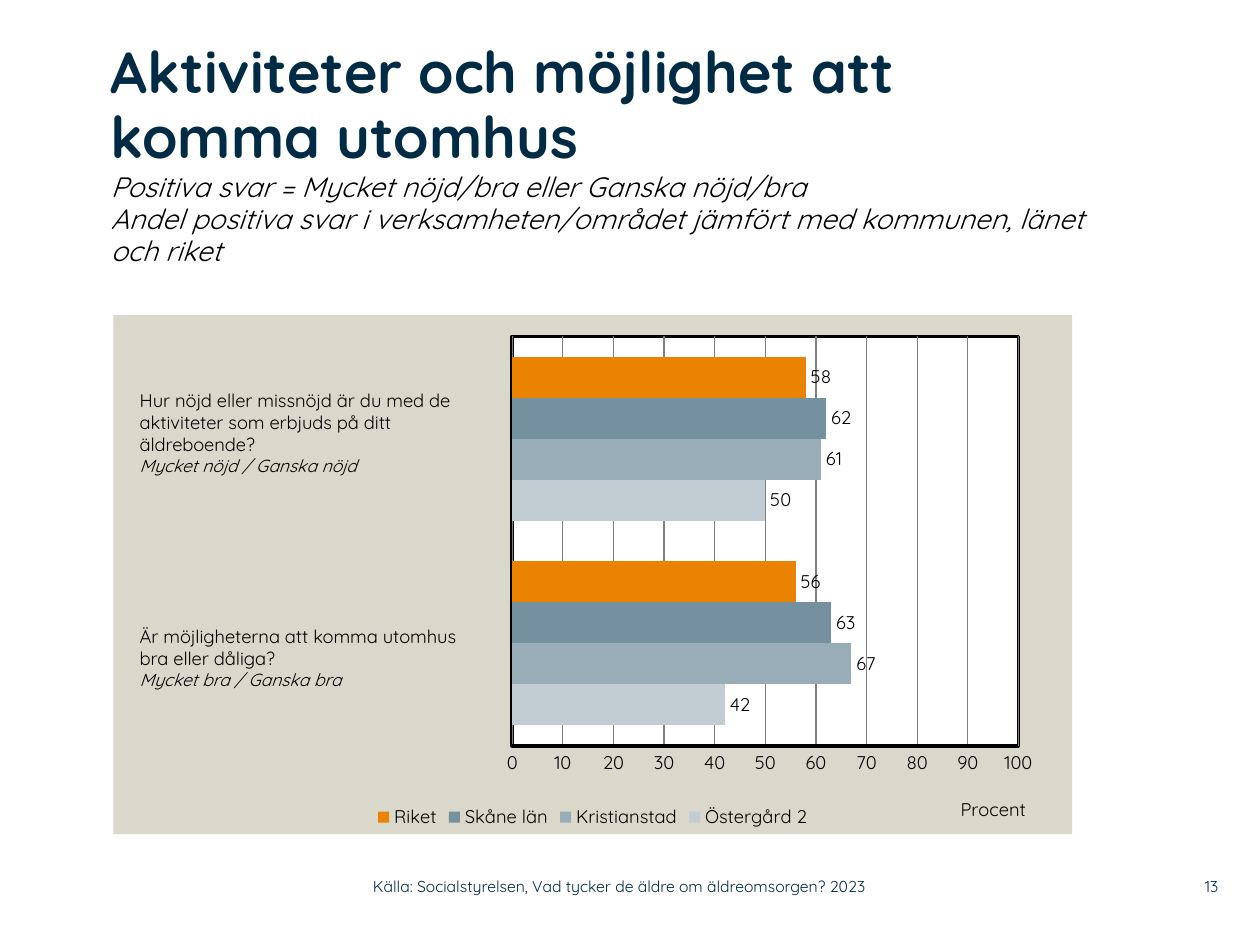
from lxml import etree
from pptx import Presentation
from pptx.chart.data import CategoryChartData
from pptx.dml.color import RGBColor
from pptx.enum.chart import XL_CHART_TYPE, XL_LABEL_POSITION, XL_LEGEND_POSITION, XL_TICK_MARK
from pptx.enum.text import MSO_ANCHOR, PP_ALIGN
from pptx.oxml.ns import qn
from pptx.util import Inches, Pt

BAR_CLUSTERED = XL_CHART_TYPE.BAR_CLUSTERED
OUTSIDE_END = XL_LABEL_POSITION.OUTSIDE_END
LEGEND_BOTTOM = XL_LEGEND_POSITION.BOTTOM
NO_TICK = XL_TICK_MARK.NONE
TOP, MIDDLE = MSO_ANCHOR.TOP, MSO_ANCHOR.MIDDLE
LEFT, RIGHT = PP_ALIGN.LEFT, PP_ALIGN.RIGHT

FONT = "Quicksand"
NAVY = RGBColor(0x00, 0x2B, 0x45)
BLACK = RGBColor(0x00, 0x00, 0x00)
WHITE = RGBColor(0xFF, 0xFF, 0xFF)
GREY = RGBColor(0x80, 0x80, 0x80)
SAND = RGBColor(0xDA, 0xD7, 0xCB)
ORANGE = RGBColor(0xE9, 0x83, 0x00)
SLATE = RGBColor(0x75, 0x90, 0x9F)
MIST = RGBColor(0x99, 0xAD, 0xB9)
PALE = RGBColor(0xC2, 0xCD, 0xD3)

SLIDE_WIDTH, SLIDE_HEIGHT = 10, 7.5
QUESTION_LEFT, QUESTION_WIDTH = 1.01, 3.01
FOOTER_TOP, FOOTER_HEIGHT = 6.89, 0.29

AREAS = [
    ("Östergård 2", (42, 50), PALE),
    ("Kristianstad", (67, 61), MIST),
    ("Skåne län", (63, 62), SLATE),
    ("Riket", (56, 58), ORANGE),
]
QUESTIONS = [
    (3.04, 0.98,
     ["Hur nöjd eller missnöjd är du med de aktiviteter som erbjuds på ditt äldreboende?"],
     "Mycket nöjd / Ganska nöjd"),
    (4.91, 0.81,
     ["Är möjligheterna att komma utomhus", "bra eller dåliga?"],
     "Mycket bra / Ganska bra"),
]


def style_font(font, size=10.5, color=BLACK, bold=False, italic=False):
    """Apply the deck's typeface with the given format."""
    font.name, font.size, font.bold, font.italic = FONT, Pt(size), bold, italic
    font.color.rgb = color


def add_text(slide, box, paragraphs, align=LEFT, anchor=TOP, inset=None, spacing=None):
    """Add a text box; each paragraph is a list of (text, font format) runs."""
    textbox = slide.shapes.add_textbox(*(Inches(length) for length in box))
    frame = textbox.text_frame
    frame.word_wrap = True
    frame.vertical_anchor = anchor
    if inset is not None:
        frame.margin_left = frame.margin_right = Inches(inset)
        frame.margin_top = frame.margin_bottom = Inches(inset)
    for index, runs in enumerate(paragraphs):
        paragraph = frame.paragraphs[0] if index == 0 else frame.add_paragraph()
        paragraph.alignment = align
        paragraph.line_spacing = spacing
        for position, (text, font_format) in enumerate(runs):
            if position:
                paragraph.add_line_break()
            run = paragraph.add_run()
            run.text = text
            style_font(run.font, **font_format)


def add_properties(parent, fill, line=None, line_width=0):
    """Give a chart part a solid fill and an optional outline."""
    properties = etree.Element(qn("c:spPr"))
    solid = etree.SubElement(properties, qn("a:solidFill"))
    etree.SubElement(solid, qn("a:srgbClr"), val=str(fill))
    outline = etree.SubElement(properties, qn("a:ln"))
    if line is None:
        etree.SubElement(outline, qn("a:noFill"))
    else:
        outline.set("w", str(Pt(line_width)))
        solid = etree.SubElement(outline, qn("a:solidFill"))
        etree.SubElement(solid, qn("a:srgbClr"), val=str(line))
    parent.append(properties)
    return properties


def build_layout(**values):
    """Return a manual chart layout with its settings in schema order."""
    layout = etree.Element(qn("c:layout"))
    manual = etree.SubElement(layout, qn("c:manualLayout"))
    for name, value in values.items():
        etree.SubElement(manual, qn(f"c:{name}"), val=str(value))
    return layout


def style_series(chart):
    """Colour the bars and show their values."""
    plot = chart.plots[0]
    plot.gap_width, plot.overlap = 100, 0
    plot.vary_by_categories = False
    for series, (_, _, color) in zip(plot.series, AREAS):
        series.format.fill.solid()
        series.format.fill.fore_color.rgb = color
        labels = series.data_labels
        labels.show_value = True
        labels.position = OUTSIDE_END
        style_font(labels.font)


def style_axes(chart):
    """Hide the question axis and set up the percentage axis."""
    chart.category_axis.visible = False
    percent = chart.value_axis
    percent.minimum_scale, percent.maximum_scale, percent.major_unit = 0, 100, 10
    percent.major_tick_mark = percent.minor_tick_mark = NO_TICK
    style_font(percent.tick_labels.font)
    percent.format.line.color.rgb = BLACK
    percent.format.line.width = Pt(2)
    percent.has_major_gridlines = True
    percent.major_gridlines.format.line.color.rgb = GREY
    percent.major_gridlines.format.line.width = Pt(0.75)
    title = percent.axis_title
    title.text_frame.text = "Procent"
    style_font(title.text_frame.paragraphs[0].runs[0].font)
    title_element = percent.axis_title._element
    for old in title_element.findall(qn("c:layout")):
        title_element.remove(old)
    title_element.find(qn("c:tx")).addnext(
        build_layout(xMode="edge", yMode="edge", x=0.88, y=0.92))


def add_answer_chart(slide):
    """Add the bar chart comparing the areas for each question."""
    answers = CategoryChartData(number_format="0")
    answers.categories = ["1", "2"]
    for name, shares, _ in AREAS:
        answers.add_series(name, shares)
    box = (Inches(length) for length in (0.9, 2.5, 7.61, 4.12))
    chart = slide.shapes.add_chart(BAR_CLUSTERED, *box, answers).chart
    chart.has_title = False
    style_font(chart.font)
    style_series(chart)
    style_axes(chart)
    chart.has_legend = True
    chart.legend.position = LEGEND_BOTTOM
    chart.legend.include_in_layout = False
    style_font(chart.legend.font)
    chart_space = chart._chartSpace
    chart_space.find(qn("c:chart")).addnext(add_properties(chart_space, SAND))
    plot_area = chart_space.find(".//" + qn("c:plotArea"))
    for old in plot_area.findall(qn("c:layout")):
        plot_area.remove(old)
    plot_area.insert(0, build_layout(
        layoutTarget="inner", xMode="edge", yMode="edge",
        x=0.416, y=0.041, w=0.528, h=0.789))
    add_properties(plot_area, WHITE, BLACK, 2)


def add_heading(slide):
    """Add the title with its explanatory lines."""
    note = dict(size=16, italic=True)
    add_text(slide, (0.88, 0.32, 7.8, 1.89), [[
        ("Aktiviteter och möjlighet att komma utomhus", dict(size=33, color=NAVY, bold=True)),
        ("Positiva svar = Mycket nöjd/bra eller Ganska nöjd/bra", note),
        ("Andel positiva svar i verksamheten/området jämfört med kommunen, länet och riket", note),
    ]], inset=0, spacing=0.95)


def add_question(slide, top, height, wording, answers):
    """Add a question and the answers counted as positive."""
    paragraphs = [[(line, {})] for line in wording]
    paragraphs.append([(answers, dict(size=10, italic=True))])
    add_text(slide, (QUESTION_LEFT, top, QUESTION_WIDTH, height), paragraphs)


def add_footer(slide, left, width, text, align=LEFT):
    """Add one text on the footer row."""
    add_text(slide, (left, FOOTER_TOP, width, FOOTER_HEIGHT),
             [[(text, dict(size=9, color=NAVY))]], align=align, anchor=MIDDLE, inset=0)


def main():
    """Build and save the slide."""
    deck = Presentation()
    deck.slide_width, deck.slide_height = Inches(SLIDE_WIDTH), Inches(SLIDE_HEIGHT)
    slide = deck.slides.add_slide(deck.slide_layouts[6])
    add_answer_chart(slide)
    add_heading(slide)
    for question in QUESTIONS:
        add_question(slide, *question)
    add_footer(slide, 9.2, 0.47, "13", align=RIGHT)
    add_footer(slide, 2.96, 4.43, "Källa: Socialstyrelsen, Vad tycker de äldre om äldreomsorgen? 2023")
    deck.save("out.pptx")


if __name__ == "__main__":
    main()
